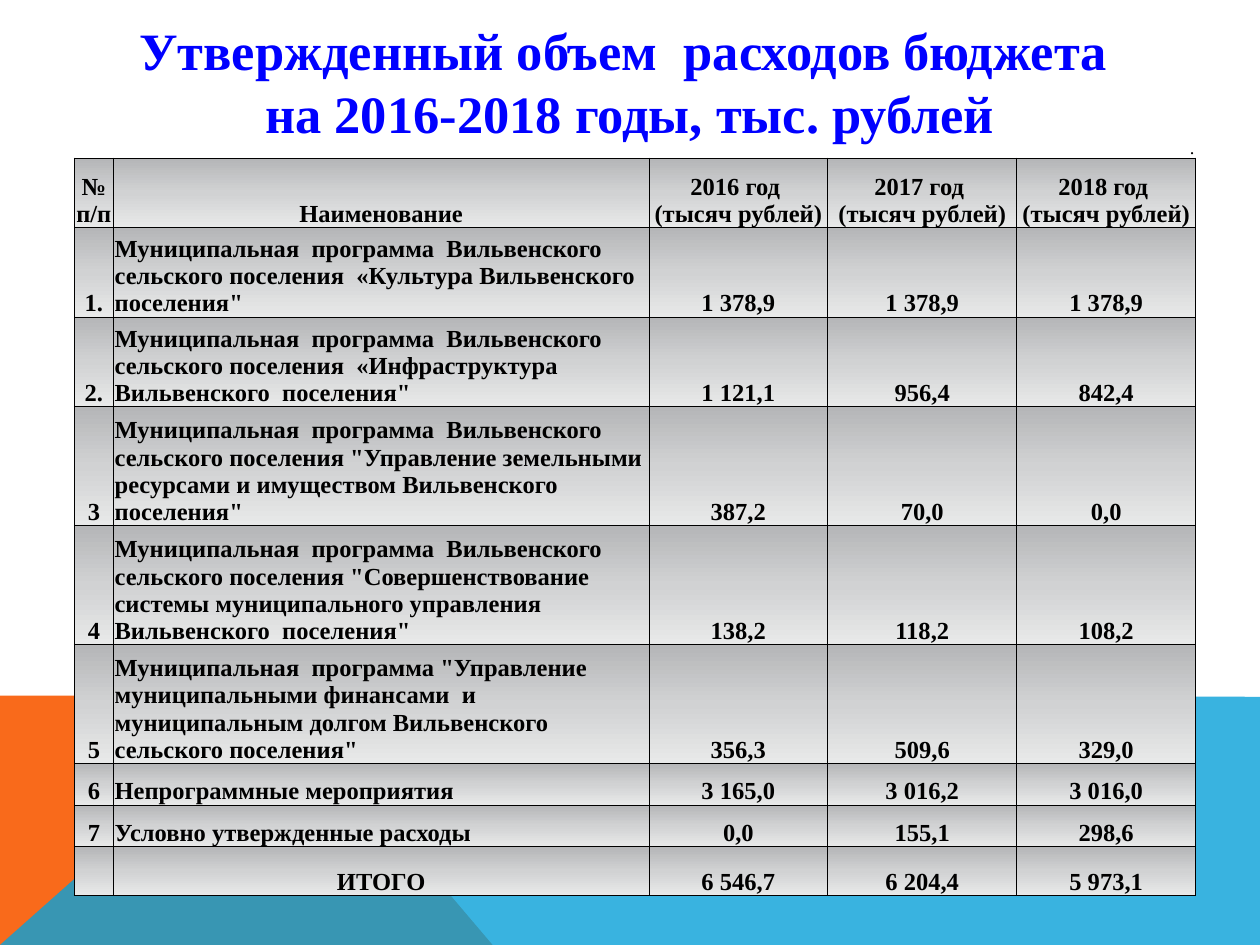
from dataclasses import dataclass

from lxml.etree import SubElement
from pptx import Presentation
from pptx.dml.color import RGBColor
from pptx.enum.text import MSO_ANCHOR, PP_ALIGN
from pptx.oxml import parse_xml
from pptx.oxml.ns import nsdecls, qn
from pptx.util import Inches, Pt


@dataclass(frozen=True)
class Theme:
    font: str = "Times New Roman"
    title_color: str = "0000FF"
    ink: str = "000000"
    orange: str = "F96A1B"
    blue: str = "08A1D9"
    cell_gradient: tuple = ((0, "B5B6B8"), (50, "D1D2D3"), (100, "E8E9E9"))
    title_size: float = 30
    cell_size: float = 14
    note_size: float = 10.5
    tiny_size: float = 1
    border_width: float = 0.5
    plain_table: str = "{2D5ABB26-0587-4C30-8999-92F81FD0307C}"


class SlideBuilder:
    def __init__(self, page, theme):
        self.page = page
        self.theme = theme

    def style(self, paragraph, size, color, bold=True, align=PP_ALIGN.CENTER):
        paragraph.alignment = align
        font = paragraph.font
        font.name, font.size, font.bold = self.theme.font, Pt(size), bold
        font.color.rgb = RGBColor.from_string(color)

    def polygon(self, points, color, opacity=100):
        (left, top), *rest = [(Inches(x), Inches(y)) for x, y in points]
        builder = self.page.shapes.build_freeform(left, top)
        builder.add_line_segments(rest, close=True)
        shape = builder.convert_to_shape()
        shape.shadow.inherit = False
        shape.fill.solid()
        shape.fill.fore_color.rgb = RGBColor.from_string(color)
        shape.line.fill.background()
        if opacity < 100:
            tint = shape.fill._xPr.find(".//" + qn("a:srgbClr"))
            SubElement(tint, qn("a:alpha"), val=str(opacity * 1000))

    def title(self, text, left, top, width, height):
        box = self.page.shapes.add_textbox(
            Inches(left), Inches(top), Inches(width), Inches(height))
        frame = box.text_frame
        frame.word_wrap = True
        frame.vertical_anchor = MSO_ANCHOR.MIDDLE
        paragraph = frame.paragraphs[0]
        paragraph.text = text
        self.style(paragraph, self.theme.title_size, self.theme.title_color)

    def table(self, rows, left, top, widths, heights):
        frame = self.page.shapes.add_table(
            len(rows), len(widths), Inches(left), Inches(top),
            Inches(sum(widths)), Inches(sum(heights)))
        table = frame.table
        table.first_row = table.horz_banding = False
        table._tbl.tblPr.find(qn("a:tableStyleId")).text = self.theme.plain_table
        for column, width in zip(table.columns, widths):
            column.width = Inches(width)
        for row, height in zip(table.rows, heights):
            row.height = Inches(height)
        for r, row in enumerate(rows):
            for c, text in enumerate(row):
                self.cell(table.cell(r, c), text, r, c)

    def cell(self, cell, text, row, column):
        theme = self.theme
        cell.margin_left = cell.margin_right = cell.margin_top = Inches(0.01)
        cell.margin_bottom = 0
        cell.vertical_anchor = MSO_ANCHOR.BOTTOM
        cell.text = text
        for paragraph in cell.text_frame.paragraphs:
            if row == 0:
                size = theme.note_size if text else theme.tiny_size
                self.style(paragraph, size, theme.ink, False, PP_ALIGN.RIGHT)
            else:
                is_name = column == 1 and 1 < row < 9
                align = PP_ALIGN.LEFT if is_name else PP_ALIGN.CENTER
                self.style(paragraph, theme.cell_size, theme.ink, align=align)
            if not text:
                SubElement(paragraph._p, qn("a:endParaRPr"), sz=str(int(size * 100)) if row == 0 else "1400")
        self.borders(cell, ("B",) if row == 0 else ("L", "R", "T", "B"))
        if row:
            self.gradient(cell)
        else:
            cell.fill.background()

    def borders(self, cell, sides):
        properties = cell._tc.get_or_add_tcPr()
        for side in sides:
            properties.append(parse_xml(
                f'<a:ln{side} {nsdecls("a")} w="{Pt(self.theme.border_width)}">'
                f'<a:solidFill><a:srgbClr val="{self.theme.ink}"/></a:solidFill>'
                f'</a:ln{side}>'))

    def gradient(self, cell):
        stops = "".join(
            f'<a:gs pos="{position * 1000}"><a:srgbClr val="{color}"/></a:gs>'
            for position, color in self.theme.cell_gradient)
        cell._tc.get_or_add_tcPr().append(parse_xml(
            f'<a:gradFill {nsdecls("a")}><a:gsLst>{stops}</a:gsLst>'
            '<a:lin ang="5400000" scaled="0"/></a:gradFill>'))


PROGRAM = "Муниципальная  программа "
SETTLEMENT = PROGRAM + " Вильвенского сельского поселения "
BUDGET = [
    ("", "", "", "", "."),
    ("№ п/п", "Наименование",
     *(f"{year} год \n(тысяч рублей)" for year in (2016, 2017, 2018))),
    ("1.", SETTLEMENT + ' «Культура Вильвенского  поселения"',
     "1 378,9", "1 378,9", "1 378,9"),
    ("2.", SETTLEMENT + ' «Инфраструктура Вильвенского  поселения"',
     "1 121,1", "956,4", "842,4"),
    ("3", SETTLEMENT + '"Управление земельными ресурсами и имуществом Вильвенского  поселения"',
     "387,2", "70,0", "0,0"),
    ("4", SETTLEMENT + '"Совершенствование системы муниципального управления  Вильвенского  поселения"',
     "138,2", "118,2", "108,2"),
    ("5", PROGRAM + '"Управление муниципальными финансами  и муниципальным долгом '
     'Вильвенского сельского поселения"', "356,3", "509,6", "329,0"),
    ("6", "Непрограммные мероприятия", "3 165,0", "3 016,2", "3 016,0"),
    ("7", "Условно утвержденные расходы", "0,0", "155,1", "298,6"),
    ("", "ИТОГО", "6 546,7", "6 204,4", "5 973,1"),
]


def main():
    deck = Presentation()
    deck.slide_width, deck.slide_height = Inches(10), Inches(7.5)
    theme = Theme()
    slide = SlideBuilder(deck.slides.add_slide(deck.slide_layouts[6]), theme)
    slide.polygon([(0, 7.5), (0, 5.52), (2.23, 5.52), (3.91, 7.5)], theme.orange)
    slide.polygon([(0, 7.5), (2.23, 5.52), (10, 5.53), (10, 7.5)], theme.blue, 80)
    slide.title("Утвержденный объем  расходов бюджета \vна 2016-2018 годы, тыс. рублей",
                0.5, 0.13, 9, 1.02)
    slide.table(BUDGET, 0.59, 1.07, widths=(0.31, 4.25, 1.42, 1.5, 1.42),
                heights=(0.17, 0.55, 0.71, 0.71, 0.94, 0.94, 0.94, 0.33, 0.33, 0.39))
    deck.save("out.pptx")


if __name__ == "__main__":
    main()
